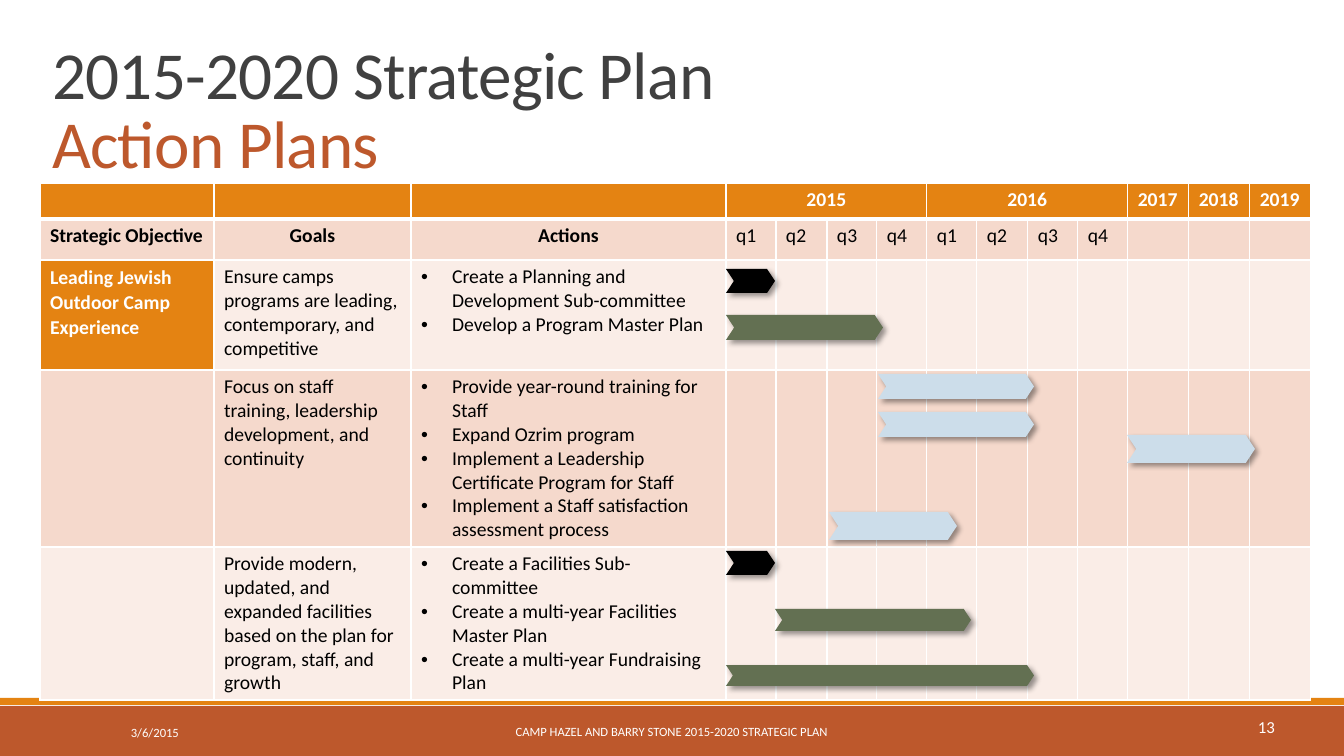
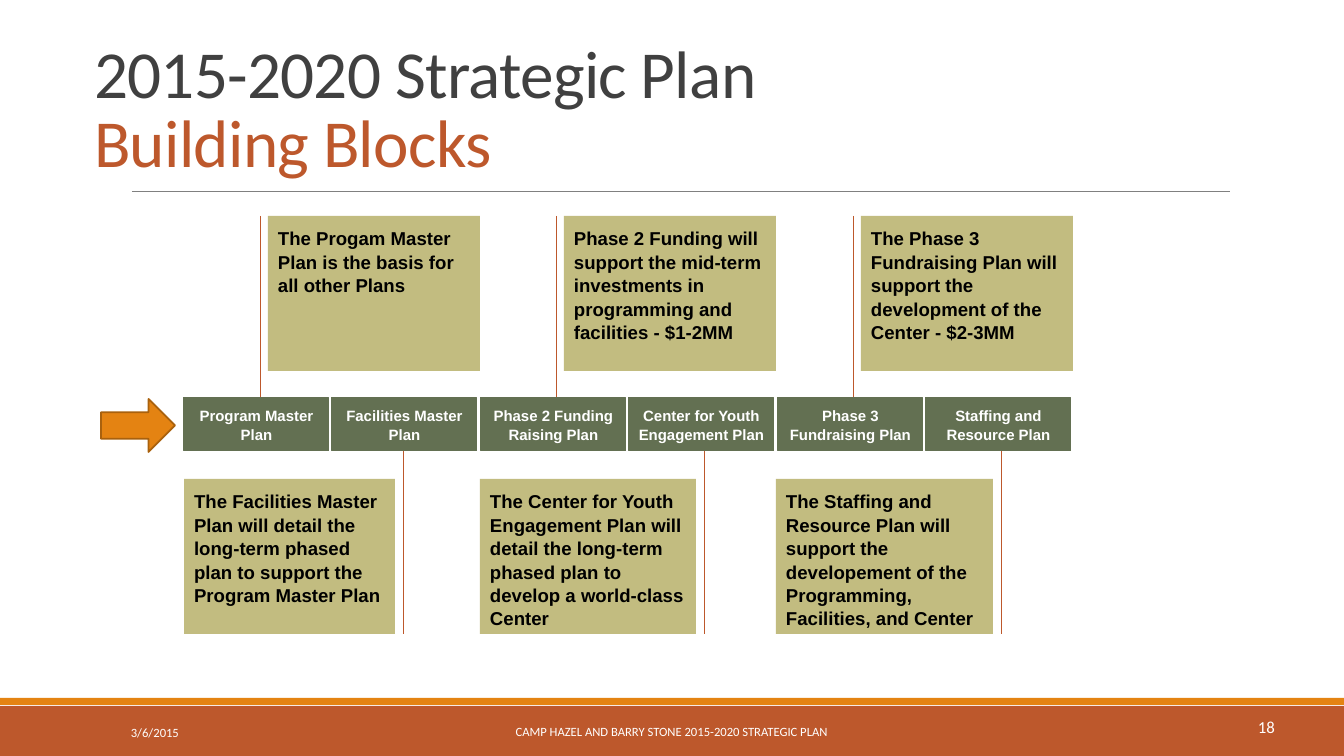
from dataclasses import dataclass

from lxml.etree import SubElement
from pptx import Presentation
from pptx.dml.color import RGBColor
from pptx.enum.shapes import MSO_CONNECTOR as Conn, MSO_SHAPE as Geo
from pptx.enum.text import MSO_ANCHOR as Anchor, MSO_AUTO_SIZE as AutoSize, PP_ALIGN as Align
from pptx.oxml.ns import qn
from pptx.util import Emu, Pt

COLORS = {
    "rust": "BD582C", "orange": "E48312", "arrow_edge": "A9610D", "gray": "808080",
    "title": "404040", "white": "FFFFFF", "black": "000000", "green": "637052",
    "blue": "CCDDEA", "khaki": "C2BC80", "band_dark": "F5D9CC", "band_light": "FAEDE7",
}
WIDTH, HEIGHT = 1344, 756
SCALE = 12192000 / WIDTH
COLUMNS = [174, 197, 315] + [50, 51, 50, 50] * 2 + [61] * 3
ROWS = [36, 41, 110, 177, 153]
QUARTERS = ["q1", "q2", "q3", "q4"]
FIRST_QUARTER = 3


@dataclass
class Style:
    """Look of a run of text and of its paragraph."""
    size: float
    color: str = "black"
    bold: bool = False
    font: str = "Calibri"
    align: Align = Align.LEFT
    spacing: float = 1.0


@dataclass
class Goal:
    """One goal row of the action plan."""
    objective: str
    goal: str
    actions: list[str]
    fill: str


@dataclass
class Bar:
    """One chevron of the schedule."""
    x: int
    y: int
    w: int
    h: int
    color: str


@dataclass
class Note:
    """A plan's description, hung above or below the block row."""
    x: int
    w: int
    above: bool
    text: str


GOALS = [
    Goal("Leading Jewish Outdoor Camp Experience",
         "Ensure camps programs are leading, contemporary, and competitive",
         ["Create a Planning and Development Sub-committee", "Develop a Program Master Plan"],
         "band_light"),
    Goal("", "Focus on staff training, leadership development, and continuity",
         ["Provide year-round training for Staff", "Expand Ozrim program",
          "Implement a Leadership Certificate Program for Staff",
          "Implement a Staff satisfaction assessment process"], "band_dark"),
    Goal("", "Provide modern, updated, and expanded facilities based on the plan for program, "
         "staff, and growth",
         ["Create a Facilities Sub-committee", "Create a multi-year Facilities Master Plan",
          "Create a multi-year Fundraising Plan"], "band_light"),
]
BARS = [
    Bar(726, 269, 49, 24, "black"), Bar(726, 315, 157, 25, "green"),
    Bar(878, 374, 156, 25, "blue"), Bar(878, 412, 156, 25, "blue"),
    Bar(1127, 435, 128, 28, "blue"), Bar(829, 512, 128, 28, "blue"),
    Bar(726, 551, 49, 24, "black"), Bar(775, 609, 196, 22, "green"),
    Bar(726, 665, 308, 21, "green"),
]
BLOCKS = ["Program Master Plan", "Facilities Master Plan", "Phase 2 Funding Raising Plan",
          "Center for Youth Engagement Plan", "Phase 3 Fundraising Plan",
          "Staffing and Resource Plan"]
NOTES = [
    Note(268, 212, True, "The Progam Master Plan is the basis for all other Plans"),
    Note(564, 212, True, "Phase 2 Funding will support the mid-term investments in "
         "programming and facilities - $1-2MM"),
    Note(861, 212, True, "The Phase 3 Fundraising Plan will support the development of the "
         "Center - $2-3MM"),
    Note(184, 211, False, "The Facilities Master Plan will detail the long-term phased plan to "
         "support the Program Master Plan"),
    Note(480, 216, False, "The Center for Youth Engagement Plan will detail the long-term "
         "phased plan to develop a world-class Center"),
    Note(776, 217, False, "The Staffing and Resource Plan will support the developement of the "
         "Programming, Facilities, and Center"),
]


def px(n: float) -> Emu:
    """Turn pixels into EMU."""
    return Emu(round(n * SCALE))


def rgb(name: str) -> RGBColor:
    """Look up a named colour."""
    return RGBColor.from_string(COLORS[name])


def add_run(p, text: str, style: Style):
    """Add one formatted run to a paragraph."""
    p.alignment, p.line_spacing = style.align, style.spacing
    r = p.add_run()
    r.text = text
    r.font.size, r.font.name, r.font.bold = Pt(style.size), style.font, style.bold
    r.font.color.rgb = rgb(style.color)
    return r


def set_insets(tf, inset: int) -> None:
    """Give a text frame the same inset on all sides."""
    tf.margin_left = tf.margin_right = tf.margin_top = tf.margin_bottom = px(inset)


def add_box(s, geo: Geo, x: int, y: int, w: int, h: int, fill: str,
            edge: str = "", edge_pt: float = 0.75):
    """Draw a flat preset shape."""
    sp = s.shapes.add_shape(geo, px(x), px(y), px(w), px(h))
    sp.shadow.inherit = False
    sp.fill.solid()
    sp.fill.fore_color.rgb = rgb(fill)
    if edge:
        sp.line.color.rgb, sp.line.width = rgb(edge), Pt(edge_pt)
    else:
        sp.line.fill.background()
    return sp


def add_text_box(s, geo_box: tuple[int, int, int, int], fill: str, edge: str, inset: int,
                 anchor: Anchor, text: str, style: Style) -> None:
    """Draw a filled rectangle with wrapped text."""
    tf = add_box(s, Geo.RECTANGLE, *geo_box, fill, edge).text_frame
    tf.word_wrap, tf.vertical_anchor = True, anchor
    set_insets(tf, inset)
    add_run(tf.paragraphs[0], text, style)


def add_line(s, x1: int, y1: int, x2: int, y2: int, color: str) -> None:
    """Draw a thin straight line."""
    line = s.shapes.add_connector(Conn.STRAIGHT, px(x1), px(y1), px(x2), px(y2))
    line.line.color.rgb, line.line.width = rgb(color), Pt(0.5)
    SubElement(line._element.spPr, qn("a:effectLst"))


def add_label(s, x: int, w: int, h: int, text: str, style: Style,
              anchor: Anchor = Anchor.MIDDLE, wrap: bool = True) -> None:
    """Write a footer text."""
    tf = s.shapes.add_textbox(px(x), px(712), px(w), px(h)).text_frame
    tf.word_wrap, tf.vertical_anchor = wrap, anchor
    if not wrap:
        tf.auto_size = AutoSize.SHAPE_TO_FIT_TEXT
    add_run(tf.paragraphs[0], text, style)


def add_base_slide(prs, x: int, y: int, subtitle: str, number: int):
    """Add a slide with the shared title, bands, rule and footer."""
    s = prs.slides.add_slide(prs.slide_layouts[5])
    add_box(s, Geo.RECTANGLE, 0, 706, WIDTH, 50, "rust")
    add_box(s, Geo.RECTANGLE, 0, 698, WIDTH, 7, "orange")
    add_line(s, 132, 191, 1230, 191, "gray")
    title = s.shapes.title
    title.left, title.top, title.width, title.height = px(x), px(y), px(1109), px(160)
    tf = title.text_frame
    tf.auto_size, tf.vertical_anchor, tf.word_wrap = AutoSize.NONE, Anchor.BOTTOM, True
    p = tf.paragraphs[0]
    runs = [add_run(p, "2015-2020 Strategic Plan", Style(48, "title", spacing=0.85))]
    p.add_line_break()
    runs.append(add_run(p, subtitle, Style(48, "rust", spacing=0.85)))
    for r in runs:
        r.font._element.set("spc", "-50")
    add_label(s, 121, 272, 40, "3/6/2015", Style(9, "white", spacing=1.05))
    add_label(s, 406, 531, 40, "CAMP HAZEL AND BARRY STONE 2015-2020 STRATEGIC PLAN",
              Style(9, "white", align=Align.CENTER))
    add_label(s, 1248, 37, 30, str(number), Style(12, "white"), Anchor.TOP, False)
    return s


def fill_cell(cell, fill: str, texts: list[str], style: Style,
              bullets: bool = False, bottom_pt: int = 1) -> None:
    """Set a cell's borders, fill and paragraphs."""
    tc_pr = cell._tc.get_or_add_tcPr()
    for side, pt in (("L", 1), ("R", 1), ("T", 1), ("B", bottom_pt)):
        ln = SubElement(tc_pr, qn(f"a:ln{side}"), w=str(Pt(pt)))
        SubElement(SubElement(ln, qn("a:solidFill")), qn("a:srgbClr"), val=COLORS["white"])
    cell.fill.solid()
    cell.fill.fore_color.rgb = rgb(fill)
    tf = cell.text_frame
    for i, text in enumerate(texts):
        p = tf.add_paragraph() if i else tf.paragraphs[0]
        if text:
            add_run(p, text, style)
        else:
            SubElement(p._p, qn("a:endParaRPr"), sz=str(round(style.size * 100)))
        if bullets:
            p_pr = p._p.get_or_add_pPr()
            p_pr.set("marL", str(px(31)))
            p_pr.set("indent", str(-px(31)))
            SubElement(p_pr, qn("a:buFont"), typeface="Arial")
            SubElement(p_pr, qn("a:buChar"), char="•")


def add_plan_table(s) -> None:
    """Build the action plan grid."""
    table = s.shapes.add_table(len(ROWS), len(COLUMNS), px(40), px(183),
                               px(sum(COLUMNS)), px(sum(ROWS))).table
    table.first_row = table.horz_banding = False
    for col, w in zip(table.columns, COLUMNS):
        col.width = px(w)
    for row, h in zip(table.rows, ROWS):
        row.height = px(h)
    years = [""] * 3 + ["2015", "", "", "", "2016", "", "", "", "2017", "2018", "2019"]
    heads = ["Strategic Objective", "Goals", "Actions"] + QUARTERS * 2 + [""] * 3
    for c, (year, head) in enumerate(zip(years, heads)):
        year_align = Align.CENTER if c < 11 else Align.LEFT
        fill_cell(table.cell(0, c), "orange", [year],
                  Style(14, "white", True, align=year_align), bottom_pt=3)
        head_align = Align.CENTER if c in (1, 2) else Align.LEFT
        fill_cell(table.cell(1, c), "band_dark", [head],
                  Style(14, bold=c < FIRST_QUARTER, align=head_align))
    for c in (FIRST_QUARTER, FIRST_QUARTER + 4):
        table.cell(0, c).merge(table.cell(0, c + 3))
    for r, goal in enumerate(GOALS, 2):
        fill_cell(table.cell(r, 0), "orange" if goal.objective else goal.fill,
                  [goal.objective], Style(14, "white", True, spacing=1.05))
        fill_cell(table.cell(r, 1), goal.fill, [goal.goal], Style(14))
        fill_cell(table.cell(r, 2), goal.fill, goal.actions, Style(14), bullets=True)
        for c in range(FIRST_QUARTER, len(COLUMNS)):
            fill_cell(table.cell(r, c), goal.fill, [""], Style(14))


def add_bar(s, bar: Bar) -> None:
    """Draw a schedule chevron with a soft shadow."""
    sp = add_box(s, Geo.CHEVRON, bar.x, bar.y, bar.w, bar.h, bar.color)
    sp.adjustments[0] = 0.33
    effects = sp._element.spPr.find(qn("a:effectLst"))
    shadow = SubElement(effects, qn("a:outerShdw"), blurRad=str(Pt(4)), dist=str(Pt(3)),
                        dir="2700000", algn="tl", rotWithShape="0")
    color = SubElement(shadow, qn("a:srgbClr"), val=COLORS["black"])
    SubElement(color, qn("a:alpha"), val="40000")


def build_action_plans(prs) -> None:
    """Build the schedule slide."""
    s = add_base_slide(prs, 42, 27, "Action Plans", 13)
    add_plan_table(s)
    for bar in BARS:
        add_bar(s, bar)


def build_building_blocks(prs) -> None:
    """Build the slide of plans and their notes."""
    s = add_base_slide(prs, 84, 26, "Building Blocks", 18)
    for note in NOTES:
        x = note.x - 8 if note.above else note.x + note.w + 8
        top = 216 if note.above else 438
        add_line(s, x, top, x, top + 196, "rust")
    for i, name in enumerate(BLOCKS):
        add_text_box(s, (184 + i * 297 // 2, 398, 145, 53), "green", "green", 5, Anchor.MIDDLE,
                     name, Style(10.7, "white", True, "Arial", Align.CENTER, 1.05))
    for note in NOTES:
        add_text_box(s, (note.x, 216 if note.above else 479, note.w, 155), "khaki", "", 10,
                     Anchor.TOP, note.text, Style(13.3, "black", True, "Arial", spacing=1.05))
    add_box(s, Geo.RIGHT_ARROW, 101, 399, 74, 53, "orange", "arrow_edge", 1.25)


def main() -> None:
    """Build and save the presentation."""
    prs = Presentation()
    prs.slide_width, prs.slide_height = px(WIDTH), px(HEIGHT)
    build_action_plans(prs)
    build_building_blocks(prs)
    prs.save("out.pptx")


if __name__ == "__main__":
    main()
